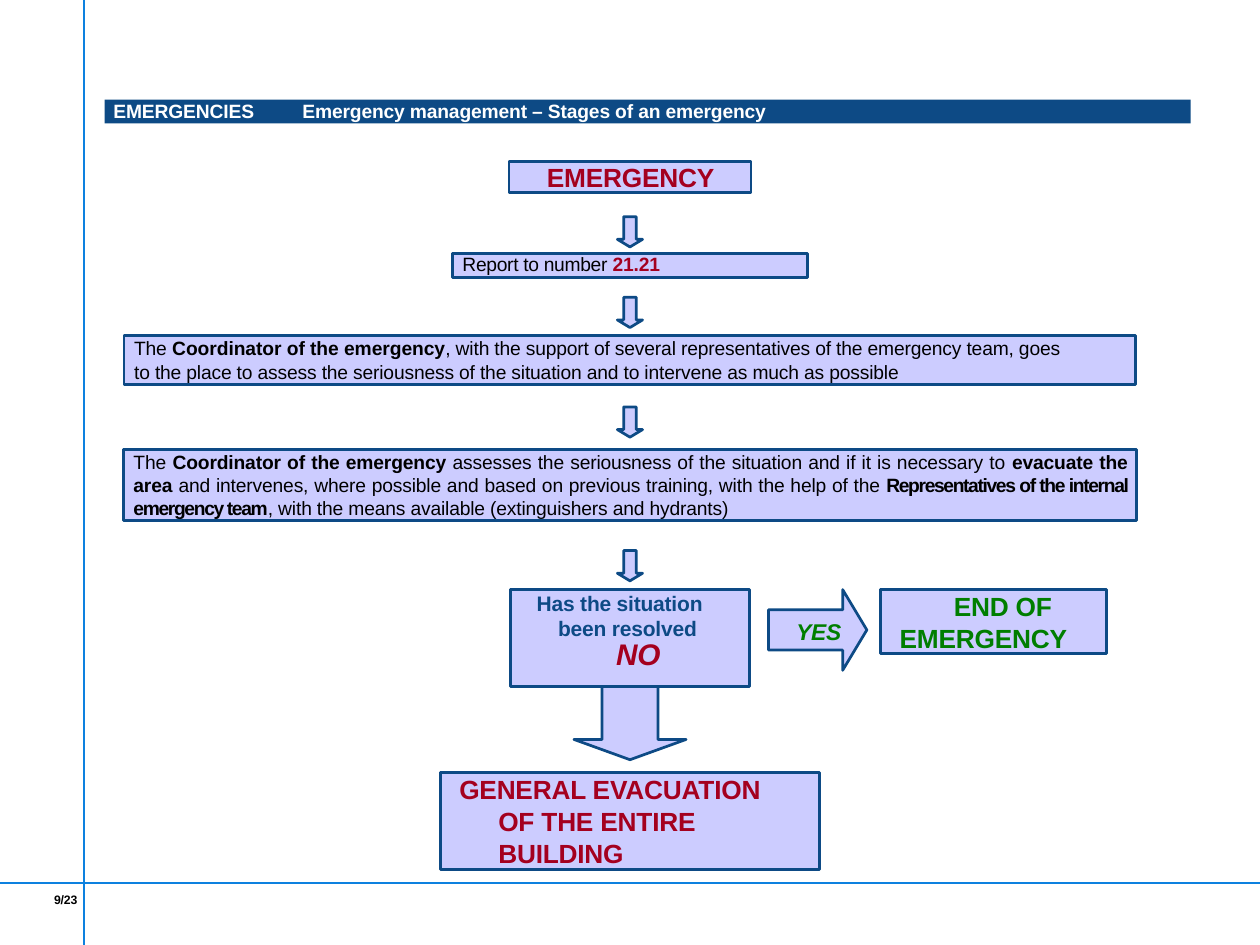
"""Builds the slide on the stages of an emergency as a flow chart."""
from lxml import etree
from pptx import Presentation, util as u
from pptx.dml.color import RGBColor
from pptx.enum import shapes, text
from pptx.oxml.ns import qn

WIDTH, HEIGHT = 10, 7.5
CENTRE = WIDTH / 2
NAVY, LILAC, RULE = "0D4A85", "CCCCFF", "0D81DF"
RED, GREEN, BLACK, WHITE = "A4001F", "007E00", "000000", "FFFFFF"
BOX, DOWN, RIGHT = (shapes.MSO_SHAPE.RECTANGLE, shapes.MSO_SHAPE.DOWN_ARROW,
                    shapes.MSO_SHAPE.RIGHT_ARROW)
BOLD = {"bold": True}

RULES = [((0, 7.01), (WIDTH, 7.01), 1.1), ((0.67, 0), (0.67, HEIGHT), 0.3),
         ((0.66, 0), (0.66, HEIGHT), 0.7)]

HEADER = dict(runs=[("EMERGENCIES\tEmergency management – Stages of an emergency", BOLD)],
              size=11, colour=WHITE, margin=0.07, tab=1.72)
PAGE = dict(runs=[("9/23", BOLD)], size=7, margin=0.08)

STAGES = [
    (1.28, 1.92, 0.25, 0, [dict(runs=[("EMERGENCY", BOLD)], size=15, colour=RED,
                                margin=0.3, spacing=u.Pt(17.8))]),
    (2.01, 2.82, 0.19, 0, [dict(
        runs=[("Report to number ", {"track": -20}), ("21.21", {"bold": True, "colour": RED})],
        size=11, margin=0.08, spacing=u.Pt(12.8))]),
    (2.66, 8.03, 0.39, 0.5, [dict(
        runs=[("The ", {}), ("Coordinator of the emergency", {"bold": True, "track": -5}),
              (", with the support of several representatives of the emergency team, goes to "
               "the place to assess the seriousness of the situation and to intervene as much "
               "as possible", {})],
        size=11, margin=0.08, spacing=1.05)]),
    (3.57, 8.04, 0.56, 0.07, [dict(
        runs=[("The ", {}), ("Coordinator of the emergency ", BOLD),
              ("assesses the seriousness of the situation and if it is necessary to ", {}),
              ("evacuate the area ", BOLD),
              ("and intervenes, where possible and based on previous training, with the help "
               "of the ", {}),
              ("Representatives of the internal emergency team", {"bold": True, "track": -80}),
              (", with the means available (extinguishers and hydrants)", {})],
        size=11, margin=0.08, align=text.PP_ALIGN.JUSTIFY)]),
    (4.68, 1.9, 0.77, 0.35, [
        dict(runs=[("Has the situation been resolved", BOLD)], size=12, colour=NAVY,
             margin=0.38, indent=-0.17, spacing=1.02),
        dict(runs=[("NO", BOLD)], size=17, colour=RED, italic=True, margin=0.84,
             spacing=u.Pt(17.6))]),
    (6.13, 3.01, 0.77, 0.4, [dict(
        runs=[("GENERAL EVACUATION OF THE ENTIRE BUILDING", BOLD)], size=15, colour=RED,
        margin=0.46, indent=-0.31, spacing=1.02)]),
]
END = [dict(runs=[("END OF EMERGENCY", BOLD)], size=15, colour=GREEN, margin=0.15,
            indent=0.43, spacing=1.02)]
YES = [dict(runs=[("YES", BOLD)], size=13, colour=GREEN, italic=True, margin=0.22,
            spacing=u.Pt(19.9))]

SMALL = (0.2, 0.24, 0.3)
STEPS = [(1.72, SMALL), (2.36, SMALL), (3.23, SMALL), (4.37, SMALL), (5.36, (0.89, 0.67, 0.24))]


def rgb(value):
    return RGBColor.from_string(value)


def write(paragraph, runs, size, colour=BLACK, italic=False, margin=0, indent=0,
          spacing=1.0, align=text.PP_ALIGN.LEFT, tab=None):
    paragraph.alignment, paragraph.line_spacing = align, spacing
    properties = paragraph._p.get_or_add_pPr()
    properties.set("marL", str(u.Inches(margin)))
    properties.set("indent", str(u.Inches(indent)))
    if tab:
        stops = etree.SubElement(properties, qn("a:tabLst"))
        etree.SubElement(stops, qn("a:tab"), pos=str(u.Inches(tab)), algn="l")
    font = paragraph.font
    font.name, font.size, font.italic = "Arial", u.Pt(size), italic
    font.color.rgb = rgb(colour)
    for words, style in runs:
        run = paragraph.add_run()
        run.text = words
        run.font.bold = style.get("bold", False)
        if "colour" in style:
            run.font.color.rgb = rgb(style["colour"])
        run._r.get_or_add_rPr().set("spc", str(style.get("track", -10)))


def fill_frame(frame, paragraphs, right=0):
    frame.word_wrap, frame.auto_size = True, text.MSO_AUTO_SIZE.NONE
    frame.vertical_anchor = text.MSO_ANCHOR.TOP
    frame.margin_left = frame.margin_top = frame.margin_bottom = 0
    frame.margin_right = u.Inches(right)
    for number, content in enumerate(paragraphs):
        write(frame.add_paragraph() if number else frame.paragraphs[0], **content)


def add_block(slide, kind, left, top, width, height, paragraphs=(), right=0, head=None):
    block = slide.shapes.add_shape(kind, *map(u.Inches, (left, top, width, height)))
    block.shadow.inherit = False
    block.fill.solid()
    block.fill.fore_color.rgb = rgb(LILAC)
    block.line.color.rgb, block.line.width = rgb(NAVY), u.Pt(1.56)
    if head:
        block.adjustments[0], block.adjustments[1] = 0.5, head
    fill_frame(block.text_frame, paragraphs, right)


def add_rule(slide, start, end, weight):
    rule = slide.shapes.add_connector(shapes.MSO_CONNECTOR.STRAIGHT,
                                      *map(u.Inches, start + end))
    rule.line.color.rgb, rule.line.width = rgb(RULE), u.Pt(weight)
    etree.SubElement(rule._element.spPr, qn("a:effectLst"))


def main():
    deck = Presentation()
    deck.slide_width, deck.slide_height = u.Inches(WIDTH), u.Inches(HEIGHT)
    slide = deck.slides.add_slide(deck.slide_layouts[5])
    for rule in RULES:
        add_rule(slide, *rule)
    header = slide.shapes.title
    header.left, header.top, header.width, header.height = map(
        u.Inches, (0.83, 0.79, 8.62, 0.19))
    header.fill.solid()
    header.fill.fore_color.rgb = rgb(NAVY)
    fill_frame(header.text_frame, [HEADER])
    for top, (width, height, head) in STEPS:
        add_block(slide, DOWN, CENTRE - width / 2, top, width, height, head=head)
    for top, width, height, right, paragraphs in STAGES:
        add_block(slide, BOX, CENTRE - width / 2, top, width, height, paragraphs, right)
    add_block(slide, RIGHT, 6.1, 4.68, 0.78, 0.64, YES, head=0.3)
    add_block(slide, BOX, 6.99, 4.68, 1.79, 0.51, END)
    page = slide.shapes.add_textbox(*map(u.Inches, (0.35, 7.08, 0.28, 0.12)))
    fill_frame(page.text_frame, [PAGE])
    deck.save("out.pptx")


if __name__ == "__main__":
    main()
